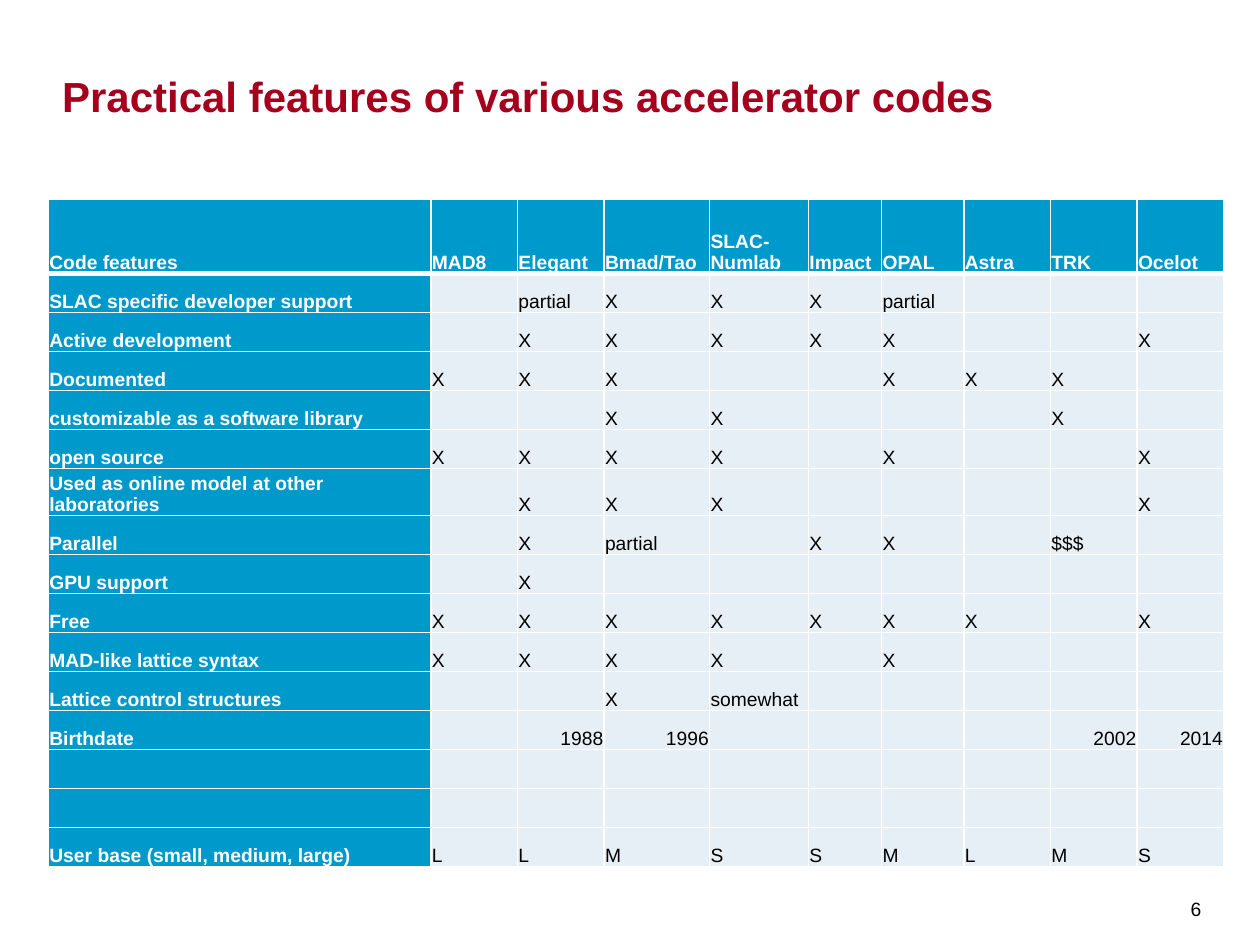
from pptx import Presentation
from pptx.dml.color import RGBColor
from pptx.enum.text import MSO_ANCHOR as Anchor, MSO_AUTO_SIZE as AutoSize, PP_ALIGN as Align
from pptx.oxml import parse_xml
from pptx.oxml.ns import nsdecls
from pptx.util import Pt

RED, BLUE, PALE, WHITE, BLACK = "A4001D", "0099CC", "E7EFF6", "FFFFFF", "000000"
COL_WIDTHS = [218.6, 49.5, 49.5, 60.3, 56.5, 41.8, 47, 49.5, 49.5, 49.5]
HEADER_HEIGHT, ROW_HEIGHT = 42.3, 22.3
FEATURES = [
    "Code features|MAD8|Elegant|Bmad/Tao|SLAC-Numlab|Impact|OPAL|Astra|TRK|Ocelot",
    "SLAC specific developer support||partial|X|X|X|partial|||",
    "Active development||X|X|X|X|X|||X",
    "Documented|X|X|X|||X|X|X|",
    "customizable as a software library|||X|X||||X|",
    "open source|X|X|X|X||X|||X",
    "Used as online model at other laboratories||X|X|X|||||X",
    "Parallel||X|partial||X|X||$$$|",
    "GPU support||X|||||||",
    "Free|X|X|X|X|X|X|X||X",
    "MAD-like lattice syntax|X|X|X|X||X|||",
    "Lattice control structures|||X|somewhat|||||",
    "Birthdate||1988|1996|||||2002|2014",
    "|||||||||",
    "|||||||||",
    "User base (small, medium, large)|L|L|M|S|S|M|L|M|S",
]


def rgb(code):
    return RGBColor.from_string(code)


def format_runs(tf, size, color, bold=False, align=Align.LEFT):
    for p in tf.paragraphs:
        p.alignment = align
        for r in p.runs:
            r.font.name = "Arial"
            r.font.size = Pt(size)
            r.font.bold = bold
            r.font.color.rgb = rgb(color)


def set_margins(item, left, top, right, bottom):
    item.margin_left, item.margin_top = Pt(left), Pt(top)
    item.margin_right, item.margin_bottom = Pt(right), Pt(bottom)


def place(sp, left, top, width, height):
    sp.left, sp.top, sp.width, sp.height = Pt(left), Pt(top), Pt(width), Pt(height)


def add_title(s, text):
    sp = s.shapes.title
    place(sp, 35.5, 10.3, 638, 59)
    tf = sp.text_frame
    tf.text = text
    tf.word_wrap = True
    tf.auto_size = AutoSize.NONE
    tf.vertical_anchor = Anchor.BOTTOM
    set_margins(tf, 0, 0, 0, 0)
    format_runs(tf, 24, RED, bold=True)


def add_page_number(s, number):
    tf = s.shapes.add_textbox(Pt(674.6), Pt(497.5), Pt(25), Pt(42.5)).text_frame
    tf.text = number
    tf.word_wrap = True
    tf.vertical_anchor = Anchor.MIDDLE
    set_margins(tf, 5.8, 4.3, 5.8, 3.6)
    format_runs(tf, 11, BLACK)


def set_borders(cell, **widths):
    """Draw white cell borders; widths are points keyed by side L, R, T, B."""
    tc_pr = cell._tc.get_or_add_tcPr()
    for side, width in widths.items():
        tc_pr.append(parse_xml(
            f'<a:ln{side} {nsdecls("a")} w="{Pt(width)}"><a:solidFill>'
            f'<a:srgbClr val="{WHITE}"/></a:solidFill></a:ln{side}>'))


def fill_cell(cell, text, row, col):
    heading = row == 0 or col == 0
    cell.text = text
    cell.vertical_anchor = Anchor.BOTTOM
    set_margins(cell, 0.5, 0.5, 0.5, 0)
    set_borders(cell, L=1, R=1, T=3 if row == 1 else 1, B=3 if row == 0 else 1)
    cell.fill.solid()
    cell.fill.fore_color.rgb = rgb(BLUE if heading else PALE)
    format_runs(cell.text_frame, 11, WHITE if heading else BLACK, heading,
                Align.RIGHT if text.isdigit() else Align.LEFT)


def add_feature_table(s):
    rows = [line.split("|") for line in FEATURES]
    height = HEADER_HEIGHT + ROW_HEIGHT * (len(rows) - 1)
    table = s.shapes.add_table(len(rows), len(COL_WIDTHS), Pt(27.7), Pt(114),
                               Pt(sum(COL_WIDTHS)), Pt(height)).table
    table.first_col = True
    for column, width in zip(table.columns, COL_WIDTHS):
        column.width = Pt(width)
    for i, texts in enumerate(rows):
        table.rows[i].height = Pt(ROW_HEIGHT if i else HEADER_HEIGHT)
        for j, text in enumerate(texts):
            fill_cell(table.cell(i, j), text, i, j)


def main():
    prs = Presentation()
    prs.slide_width, prs.slide_height = Pt(720), Pt(540)
    s = prs.slides.add_slide(prs.slide_layouts[5])
    add_page_number(s, "6")
    add_title(s, "Practical features of various accelerator codes")
    add_feature_table(s)
    prs.save("out.pptx")


if __name__ == "__main__":
    main()
